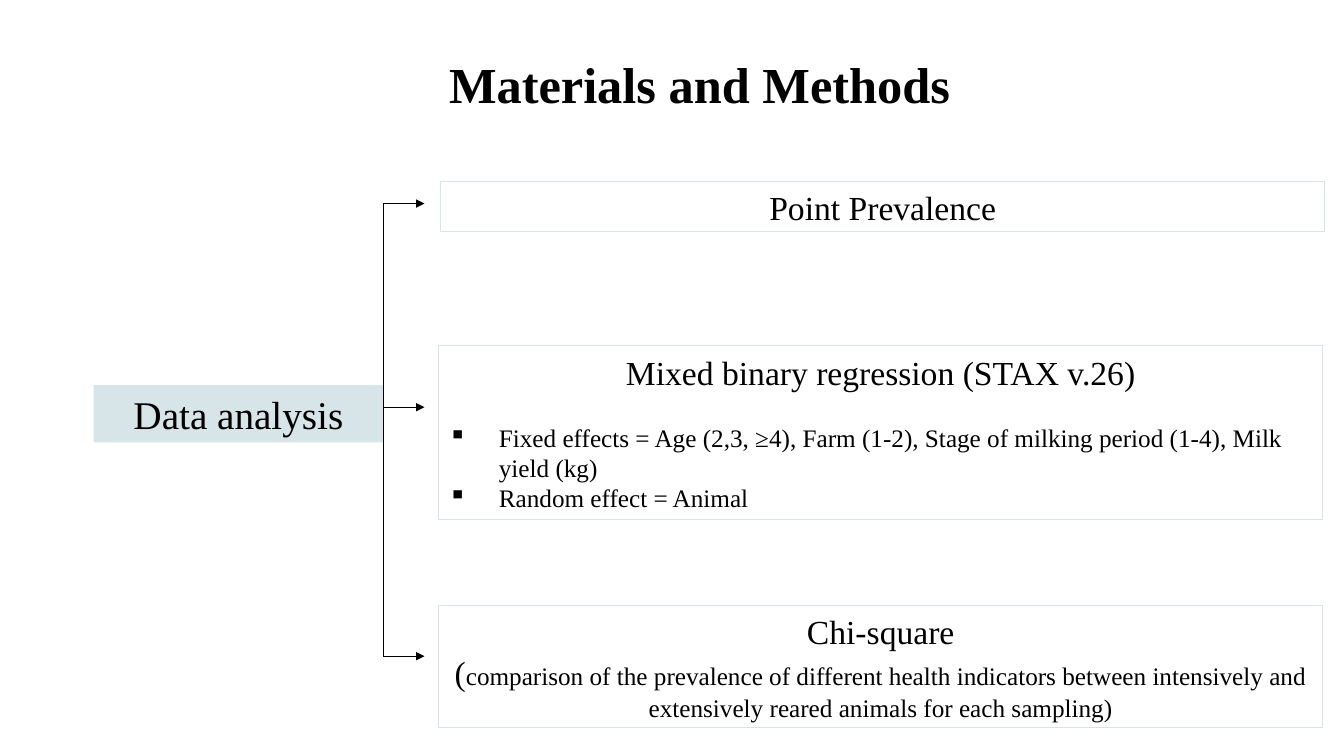
from dataclasses import dataclass

from lxml.etree import SubElement
from pptx import Presentation
from pptx.dml.color import RGBColor
from pptx.enum.shapes import MSO_CONNECTOR as Connector, MSO_SHAPE as Shape
from pptx.enum.text import MSO_ANCHOR as Anchor, MSO_AUTO_SIZE as AutoSize, PP_ALIGN as Align
from pptx.oxml.ns import qn
from pptx.util import Emu, Pt

EMU_PER_PX = 9144  # 100 px to the inch
FONT = "Times New Roman"
BLACK = RGBColor(0x00, 0x00, 0x00)
PALE_BLUE = RGBColor(0xD7, 0xE5, 0xE9)
BULLET_INDENT = 50


@dataclass(frozen=True)
class Run:
    text: str
    size: int
    bold: bool = False


@dataclass(frozen=True)
class Line:
    runs: tuple[Run, ...]
    bullet: bool = False
    space_before: int = 0


@dataclass(frozen=True)
class Box:
    left: int
    top: int
    width: int
    height: int
    lines: tuple[Line, ...]
    filled: bool = False


@dataclass(frozen=True)
class Segment:
    start: tuple[int, int]
    end: tuple[int, int]
    arrow: bool = True


def px(length: int) -> Emu:
    return Emu(length * EMU_PER_PX)


def add_bullet(paragraph) -> None:
    properties = paragraph._p.get_or_add_pPr()
    properties.set("marL", str(px(BULLET_INDENT)))
    properties.set("indent", str(px(-BULLET_INDENT)))
    SubElement(properties, qn("a:buChar")).set("char", "▪")


def write_lines(text_frame, lines: tuple[Line, ...]) -> None:
    text_frame.word_wrap = True
    text_frame.auto_size = AutoSize.NONE
    text_frame.vertical_anchor = Anchor.MIDDLE
    for index, line in enumerate(lines):
        paragraph = text_frame.add_paragraph() if index else text_frame.paragraphs[0]
        if line.bullet:
            add_bullet(paragraph)
        paragraph.alignment = Align.LEFT if line.bullet else Align.CENTER
        paragraph.line_spacing = 1.0
        paragraph.space_before = Pt(line.space_before)
        for part in line.runs:
            run = paragraph.add_run()
            run.text = part.text
            run.font.name = FONT
            run.font.size = Pt(part.size)
            run.font.bold = part.bold
            run.font.color.rgb = BLACK


def place(shape, box: Box) -> None:
    shape.left, shape.top = px(box.left), px(box.top)
    shape.width, shape.height = px(box.width), px(box.height)
    write_lines(shape.text_frame, box.lines)


def add_box(slide, box: Box) -> None:
    shape = slide.shapes.add_shape(Shape.RECTANGLE, 0, 0, 0, 0)
    shape.shadow.inherit = False
    if box.filled:
        shape.fill.solid()
        shape.fill.fore_color.rgb = PALE_BLUE
        shape.line.fill.background()
    else:
        shape.fill.background()
        shape.line.color.rgb = PALE_BLUE
        shape.line.width = Pt(0.75)
    place(shape, box)


def add_segment(slide, segment: Segment) -> None:
    connector = slide.shapes.add_connector(
        Connector.STRAIGHT, *map(px, segment.start), *map(px, segment.end)
    )
    connector.line.color.rgb = BLACK
    connector.line.width = Pt(0.5)
    if segment.arrow:
        SubElement(connector.line._get_or_add_ln(), qn("a:tailEnd")).set("type", "triangle")
    SubElement(connector._element.spPr, qn("a:effectLst"))


TITLE = Box(389, 47, 610, 71, (Line((Run("Materials and Methods", 36, bold=True),)),))

BOXES = (
    Box(93, 382, 287, 57, (Line((Run("Data analysis", 28),)),), filled=True),
    Box(437, 180, 877, 50, (Line((Run("Point Prevalence", 24),)),)),
    Box(435, 343, 877, 172, (
        Line((Run("Mixed binary regression (STAX v.26)", 24),)),
        Line((Run("Fixed effects = Age (2,3, ≥4), Farm (1-2), Stage of milking period (1-4), "
                  "Milk yield (kg)", 18),), bullet=True, space_before=21),
        Line((Run("Random effect = Animal", 18),), bullet=True),
    )),
    Box(435, 601, 877, 121, (
        Line((Run("Chi-square", 24),)),
        Line((Run("(", 24),
              Run("comparison of the prevalence of different health indicators between "
                  "intensively and extensively reared animals for each sampling)", 18))),
    )),
)

TRUNK_X = 380
BRANCH_LENGTH = 41
BRANCH_YS = (202, 404, 651)
SEGMENTS = (
    Segment((TRUNK_X, BRANCH_YS[0]), (TRUNK_X, BRANCH_YS[-1]), arrow=False),
    *(Segment((TRUNK_X, y), (TRUNK_X + BRANCH_LENGTH, y)) for y in BRANCH_YS),
)


def main() -> None:
    presentation = Presentation()
    presentation.slide_width, presentation.slide_height = px(1333), px(750)
    slide = presentation.slides.add_slide(presentation.slide_layouts[5])

    # Title
    place(slide.shapes.title, TITLE)

    # Analysis and its methods
    for box in BOXES:
        add_box(slide, box)

    # Branching arrows
    for segment in SEGMENTS:
        add_segment(slide, segment)

    presentation.save("out.pptx")


if __name__ == "__main__":
    main()
